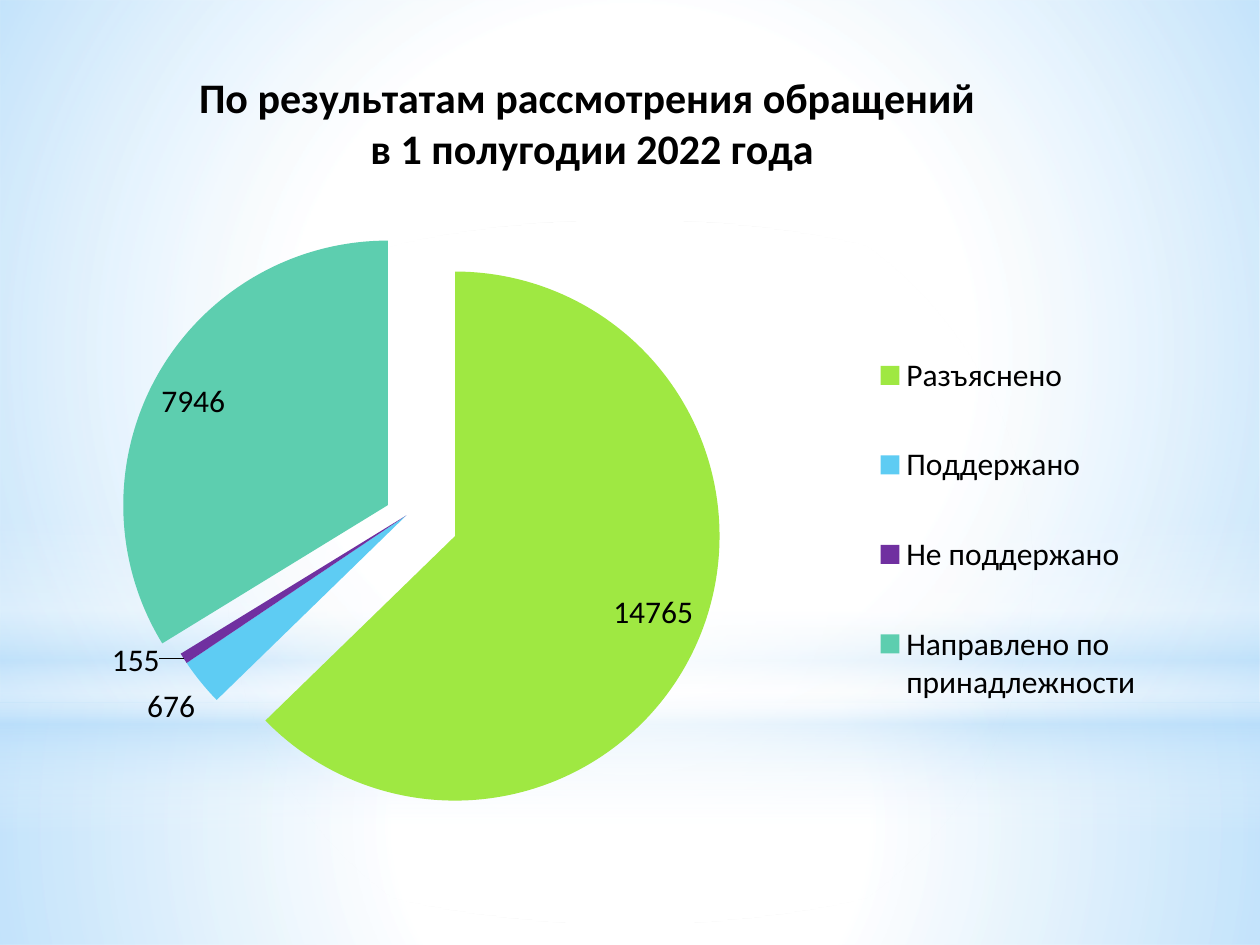
from lxml import etree
from pptx import Presentation
from pptx.chart.data import CategoryChartData
from pptx.dml.color import RGBColor
from pptx.enum.chart import XL_CHART_TYPE, XL_LABEL_POSITION, XL_LEGEND_POSITION
from pptx.enum.shapes import MSO_SHAPE
from pptx.oxml import parse_xml
from pptx.oxml.ns import nsdecls, qn
from pptx.util import Cm, Pt

RECTANGLE = MSO_SHAPE.RECTANGLE
OVAL = MSO_SHAPE.OVAL
PIE = XL_CHART_TYPE.PIE
BEST_FIT = XL_LABEL_POSITION.BEST_FIT
OUTSIDE_END = XL_LABEL_POSITION.OUTSIDE_END
RIGHT = XL_LEGEND_POSITION.RIGHT

BLACK = RGBColor(0x00, 0x00, 0x00)
WHITE = RGBColor(0xFF, 0xFF, 0xFF)
SKY = RGBColor(0xB4, 0xDC, 0xFA)
LIME = RGBColor(0x9F, 0xE8, 0x42)
BLUE = RGBColor(0x5E, 0xCC, 0xF3)
PURPLE = RGBColor(0x70, 0x30, 0xA0)
TEAL = RGBColor(0x5D, 0xCE, 0xAF)

CENTRED = ('<a:path path="circle"><a:fillToRect l="50000" t="50000" '
           'r="50000" b="50000"/></a:path>')
DOWNWARD = '<a:lin ang="5400000" scaled="0"/>'

TITLE = "По результатам рассмотрения обращений \nв 1 полугодии 2022 года"
RESULTS = [
    ("Разъяснено", 14765, LIME, 20),
    ("Поддержано", 676, BLUE, 0),
    ("Не поддержано", 155, PURPLE, 0),
    ("Направлено по принадлежности", 7946, TEAL, 8),
]
SUPPORTED, REJECTED = 1, 2


class SlideBuilder:
    """Holds the text style and the current slide, and adds elements to it."""

    def __init__(self, slide, font_name="Calibri", font_size=18):
        self.slide = slide
        self.font_name = font_name
        self.font_size = font_size

    def style(self, font, size=None, bold=False):
        font.name = self.font_name
        font.size = Pt(size or self.font_size)
        font.bold = bold
        font.color.rgb = BLACK

    def glow(self, kind, top, height, stops, direction):
        shape = self.slide.shapes.add_shape(kind, Cm(0), Cm(top), Cm(25.4), Cm(height))
        shape.shadow.inherit = False
        shape.line.fill.background()
        shape.fill.background()
        stop_xml = "".join(
            f'<a:gs pos="{position * 1000}"><a:srgbClr val="{color}">'
            f'<a:alpha val="{opacity * 1000}"/></a:srgbClr></a:gs>'
            for position, color, opacity in stops)
        gradient = parse_xml(f'<a:gradFill {nsdecls("a")} rotWithShape="1">'
                             f'<a:gsLst>{stop_xml}</a:gsLst>{direction}</a:gradFill>')
        properties = shape.element.spPr
        properties.replace(properties.find(qn("a:noFill")), gradient)

    def layout(self, parent, after, modes, **percentages):
        for old in parent.findall(qn("c:layout")):
            parent.remove(old)
        layout = etree.Element(qn("c:layout"))
        manual = etree.SubElement(layout, qn("c:manualLayout"))
        values = {name: percentage / 100 for name, percentage in percentages.items()}
        for name, value in {**modes, **values}.items():
            etree.SubElement(manual, qn(f"c:{name}")).set("val", str(value))
        if after is None:
            parent.insert(0, layout)
        else:
            parent.find(qn(after)).addnext(layout)

    def explode(self, following, amount):
        explosion = etree.Element(qn("c:explosion"))
        explosion.set("val", str(amount))
        following.addprevious(explosion)

    def pie(self, title, results):
        data = CategoryChartData()
        data.categories = [name for name, *_ in results]
        data.add_series("Series 1", [value for _, value, *_ in results])
        chart = self.slide.shapes.add_chart(
            PIE, Cm(0), Cm(0.13), Cm(25.4), Cm(18.92), data).chart
        self.style(chart.font)
        self.title(chart, title)
        self.legend(chart)
        plot = chart.plots[0]
        self.layout(plot._element.getparent(), None,
                    {"layoutTarget": "inner", "xMode": "edge", "yMode": "edge"},
                    x=6, y=18.9, w=52.5, h=70.7)
        plot.vary_by_categories = True
        series = plot.series[0]
        for index, (_, _, color, offset) in enumerate(results):
            fill = series.points[index].format.fill
            fill.solid()
            fill.fore_color.rgb = color
            slice_element = series._element.findall(qn("c:dPt"))[index]
            self.explode(slice_element.find(qn("c:spPr")), offset)
        self.explode(series._element.find(qn("c:dPt")), 25)
        self.labels(series)

    def title(self, chart, text):
        chart.has_title = True
        frame = chart.chart_title.text_frame
        frame.text = text
        for paragraph in frame.paragraphs:
            self.style(paragraph.runs[0].font, 24, True)
        element = chart.chart_title._element
        self.layout(element, "c:tx", {"xMode": "edge", "yMode": "edge"}, x=15.5, y=6.5)
        element.find(qn("c:overlay")).set("val", "1")

    def legend(self, chart):
        chart.has_legend = True
        chart.legend.position = RIGHT
        chart.legend.include_in_layout = False
        self.style(chart.legend.font)
        self.layout(chart.legend._element, "c:legendPos",
                    {"xMode": "edge", "yMode": "edge"}, x=68, y=31.8, w=24, h=47.7)

    def labels(self, series):
        labels = series.data_labels
        labels.show_value = True
        labels.position = BEST_FIT
        self.style(labels.font)
        for index, position in ((SUPPORTED, OUTSIDE_END), (REJECTED, BEST_FIT)):
            label = series.points[index].data_label
            self.style(label.font)
            label.position = position
        self.layout(labels._element.findall(qn("c:dLbl"))[-1], "c:idx", {},
                    x=-1.4, y=-2.2)


def main():
    presentation = Presentation()
    presentation.slide_width = Cm(25.4)
    presentation.slide_height = Cm(19.05)
    builder = SlideBuilder(presentation.slides.add_slide(presentation.slide_layouts[6]))
    builder.glow(RECTANGLE, 14.17, 4.88,
                 [(0, WHITE, 91), (37, WHITE, 76), (100, SKY, 79)], CENTRED)
    builder.glow(RECTANGLE, 0, 14.17,
                 [(0, WHITE, 89), (48, WHITE, 62), (100, SKY, 79)], CENTRED)
    builder.glow(RECTANGLE, 10.46, 6.35,
                 [(0, WHITE, 0), (29, WHITE, 30), (45, SKY, 40),
                  (55, WHITE, 26), (65, SKY, 60), (100, WHITE, 0)], DOWNWARD)
    builder.glow(OVAL, 4.45, 14.17, [(0, WHITE, 100), (56, WHITE, 0)], CENTRED)
    builder.pie(TITLE, RESULTS)
    presentation.save("out.pptx")


if __name__ == "__main__":
    main()
